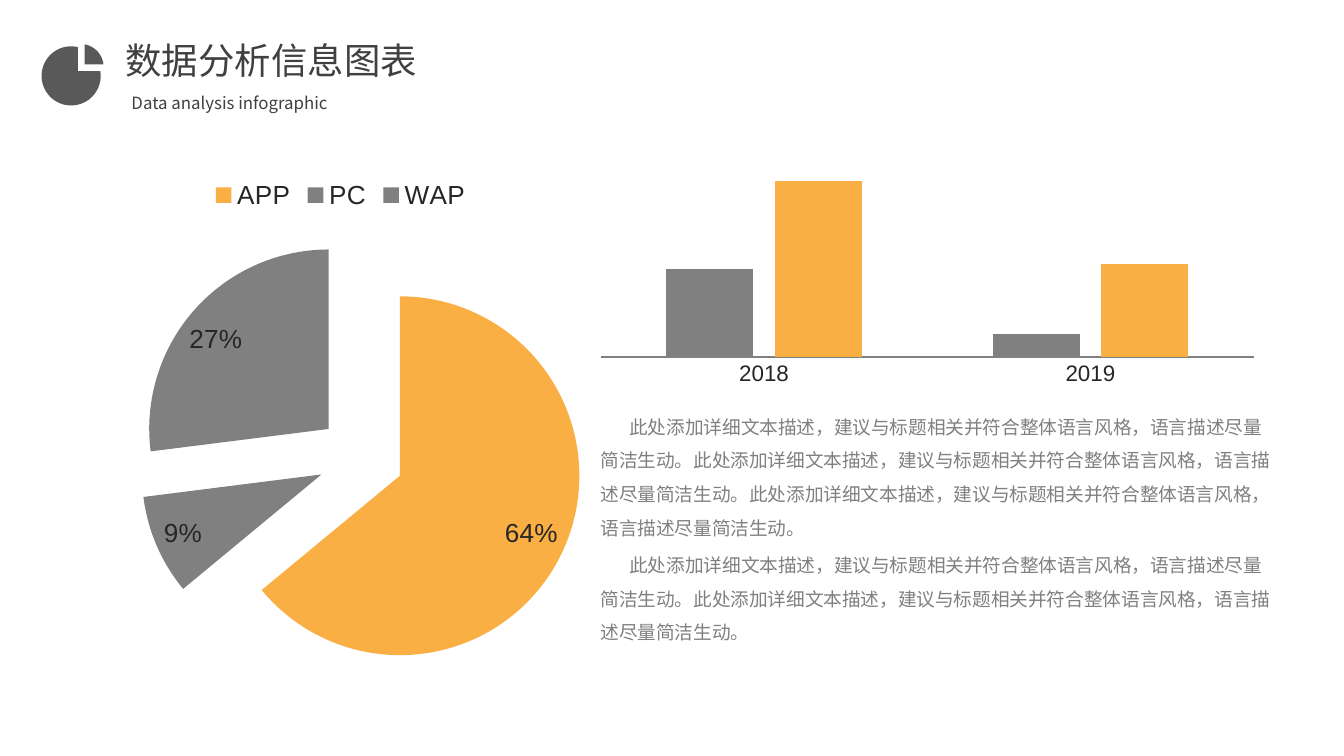
import math

from lxml import etree
from pptx import Presentation
from pptx import util as u
from pptx.chart.data import CategoryChartData
from pptx.dml.color import RGBColor
from pptx.enum import chart as ch, text
from pptx.oxml import ns

CELL = u.Inches(0.1)  # the slide is a grid of 100 columns by 56.25 rows
ORANGE, GREY, DARK, INK, ICON = "F9AF44", "808080", "262626", "404040", "595959"
CJK = "Noto Sans CJK SC"

prs = Presentation()
prs.slide_width, prs.slide_height = int(100 * CELL), int(56.25 * CELL)
slide = prs.slides.add_slide(prs.slide_layouts[6])


def paint(fill, colour):
    fill.solid()
    fill.fore_color.rgb = RGBColor.from_string(colour)


def add_text(paragraphs, box, size, colour, font=CJK, wrap=False,
             line=None, before=0, indent=0):
    frame = slide.shapes.add_textbox(*(int(n * CELL) for n in box)).text_frame
    frame.word_wrap = wrap
    frame.auto_size = text.MSO_AUTO_SIZE.SHAPE_TO_FIT_TEXT
    for i, words in enumerate(paragraphs):
        para = frame.add_paragraph() if i else frame.paragraphs[0]
        para.line_spacing = line
        para.space_before = u.Pt(before)
        if indent:
            para._p.get_or_add_pPr().set("indent", str(int(indent * CELL)))
        run = para.add_run()
        run.text = words
        run.font.size, run.font.name = u.Pt(size), font
        paint(run.font.fill, colour)
        east_asian = etree.SubElement(run.font._element, ns.qn("a:ea"))
        east_asian.set("typeface", font)


# Share of each channel
share_data = CategoryChartData()
share_data.categories = ["APP", "PC", "WAP"]
share_data.add_series("Series 1", [64, 9, 27])
share_box = [int(n * CELL) for n in (-4.9, 12.3, 60.5, 39.9)]
share = slide.shapes.add_chart(ch.XL_CHART_TYPE.PIE, *share_box, share_data).chart
share.has_legend = True
share.legend.position = ch.XL_LEGEND_POSITION.TOP
share.legend.include_in_layout = False

slices = share.plots[0].series[0]
paint(slices.format.fill, GREY)
explosion = etree.Element(ns.qn("c:explosion"), val="24")
slices._element.find(ns.qn("c:spPr")).addnext(explosion)
for i, colour in enumerate([ORANGE, GREY, GREY]):
    paint(slices.points[i].format.fill, colour)

share.plots[0].has_data_labels = True
labels = share.plots[0].data_labels
labels.show_percentage, labels.show_value = True, False
labels.number_format, labels.number_format_is_linked = "0%", False
labels.position = ch.XL_LABEL_POSITION.BEST_FIT

# Yearly comparison
yearly_data = CategoryChartData()
yearly_data.categories = ["2018", "2019"]
yearly_data.add_series("Series 1", [50, 13])
yearly_data.add_series("Series 2", [100, 53])
yearly_box = [int(n * CELL) for n in (43.7, 12.3, 50.6, 16.8)]
yearly = slide.shapes.add_chart(
    ch.XL_CHART_TYPE.COLUMN_CLUSTERED, *yearly_box, yearly_data).chart
yearly.has_legend = False
columns = yearly.plots[0]
columns.gap_width, columns.overlap = 150, -25
columns.vary_by_categories = False
for series, colour in zip(columns.series, [GREY, ORANGE]):
    paint(series.format.fill, colour)
years, values = yearly.category_axis, yearly.value_axis
years.major_tick_mark = years.minor_tick_mark = ch.XL_TICK_MARK.NONE
years.has_major_gridlines = values.has_major_gridlines = False
paint(years.format.line.fill, GREY)
years.format.line.width = u.Pt(0.75)
values.visible = False
values.minimum_scale, values.maximum_scale = 0, 100

# Plot areas as shares of their chart: left, top, width, height
for chart, size, plot_box in [(share, 14, (0.25, 0.13, 0.55, 0.83)),
                              (yearly, 12, (0.02, 0.07, 0.96, 0.78))]:
    chart.has_title = False
    chart.font.size, chart.font.name = u.Pt(size), "Arial"
    paint(chart.font.fill, DARK)
    plot_area = chart._chartSpace.chart.plotArea
    for old in plot_area.findall(ns.qn("c:layout")):
        plot_area.remove(old)
    layout = etree.Element(ns.qn("c:layout"))
    plot_area.insert(0, layout)
    manual = etree.SubElement(layout, ns.qn("c:manualLayout"))
    settings = [("layoutTarget", "inner"), ("xMode", "edge"), ("yMode", "edge"),
                *zip("xywh", plot_box)]
    for tag, value in settings:
        etree.SubElement(manual, ns.qn(f"c:{tag}"), val=str(value))

# Description
sentence = "此处添加详细文本描述，建议与标题相关并符合整体语言风格，语言描述尽量简洁生动。"
add_text([sentence * 3, sentence * 2], (43.7, 29.6, 52, 19), 10, GREY,
         font="Arial", wrap=True, line=1.5, before=2, indent=2.15)

# Heading with its pie icon: centre, radius, arc in degrees, inner corner
add_text(["数据分析信息图表"], (8.35, 2.35, 23.9, 4.3), 19.5, INK)
icon_parts = [
    ((5.3, 5.65), 2.2, (-9, 283), (5.8, 5.3)),
    ((6, 5), 1.72, (-80, -7), (6.3, 4.8)),
]
icon_outline = slide.shapes.build_freeform(5.8 * CELL, 5.3 * CELL)
for (cx, cy), radius, (start, end), (corner_x, corner_y) in icon_parts:
    angles = [math.radians(start + (end - start) * i / 60) for i in range(61)]
    arc = [((cx + radius * math.cos(a)) * CELL, (cy + radius * math.sin(a)) * CELL)
           for a in angles]
    icon_outline.move_to(corner_x * CELL, corner_y * CELL)
    icon_outline.add_line_segments(arc, close=True)
icon = icon_outline.convert_to_shape()
icon.shadow.inherit = False
paint(icon.fill, ICON)
icon.line.fill.background()
add_text(["Data analysis infographic"], (8.8, 6.4, 17.8, 2.5), 9, INK)

prs.save("out.pptx")
